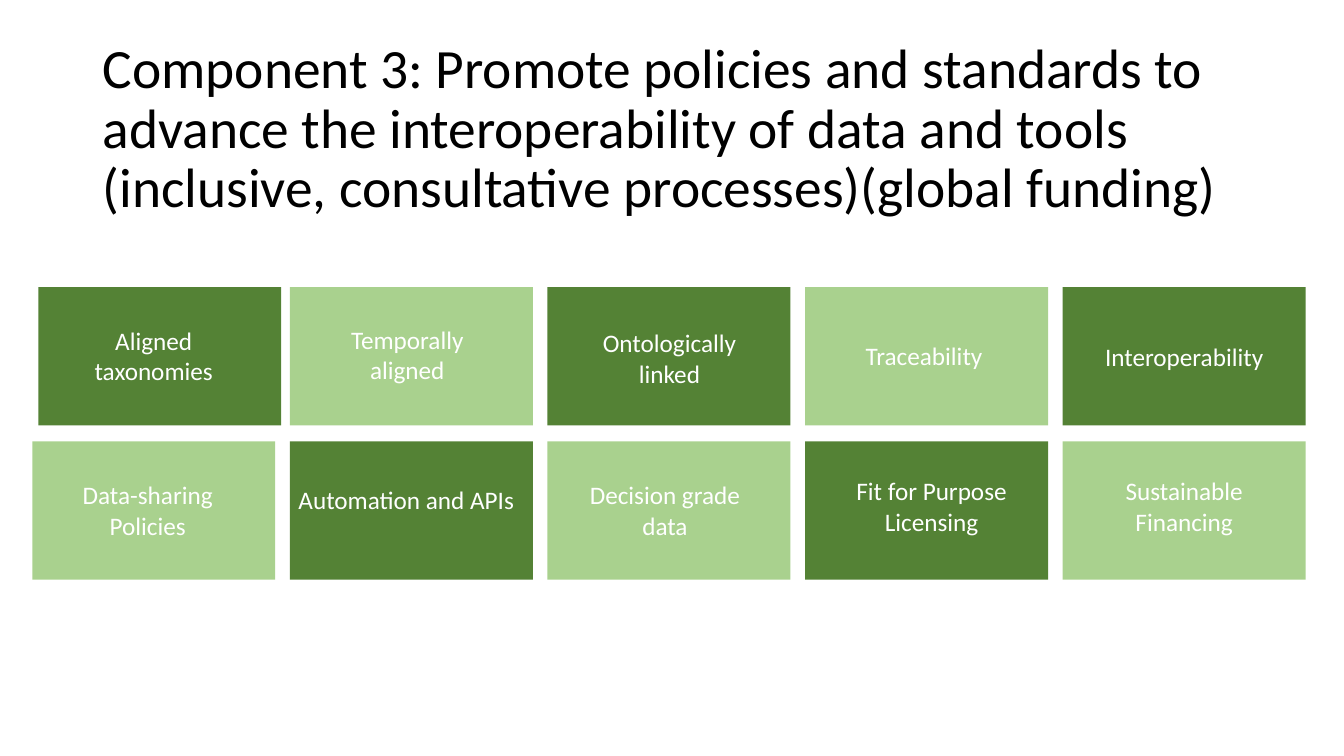
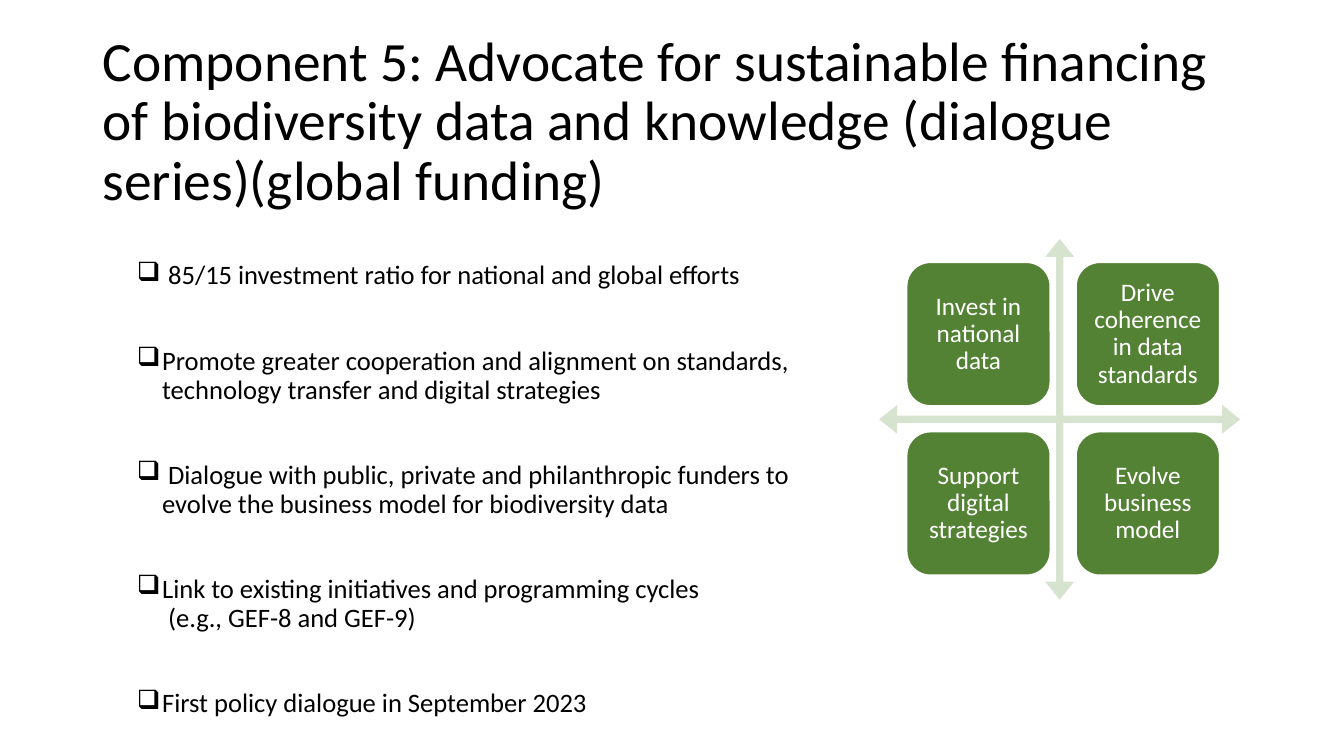
from lxml.etree import SubElement
from pptx import Presentation
from pptx.dml.color import RGBColor
from pptx.enum.shapes import MSO_SHAPE
from pptx.enum.text import MSO_ANCHOR, PP_ALIGN
from pptx.oxml.ns import qn
from pptx.util import Inches, Pt

COLORS = {
    "text": "000000",
    "white": "FFFFFF",
    "dark": "548235",
    "light": "A9D18E",
    "arrows": "D5E3CF",
}
FONT = "Calibri"


def apply(target, values):
    for name, value in values.items():
        setattr(target, name, value)


class Deck:
    def __init__(self):
        self.presentation = Presentation()
        apply(self.presentation, {"slide_width": Inches(13.33), "slide_height": Inches(7.5)})
        self.slide = None

    def start_slide(self, heading, heading_height):
        self.slide = self.presentation.slides.add_slide(self.presentation.slide_layouts[6])
        frame = self.text_box(0.92, 0.4, 11.5, heading_height)
        frame.vertical_anchor = MSO_ANCHOR.MIDDLE
        self.fill_paragraph(frame.paragraphs[0], heading, 39.6, "text", {"line_spacing": 0.9})

    def text_box(self, left, top, width, height):
        box = self.slide.shapes.add_textbox(
            Inches(left), Inches(top), Inches(width), Inches(height))
        box.text_frame.word_wrap = True
        return box.text_frame

    def fill_paragraph(self, paragraph, text, size, color, layout):
        paragraph.text = text
        apply(paragraph, layout)
        for run in paragraph.runs:
            apply(run.font, {"name": FONT, "size": Pt(size)})
            run.font.color.rgb = RGBColor.from_string(COLORS[color])

    def shape(self, preset, left, top, width, height, fill, outline=None):
        shape = self.slide.shapes.add_shape(
            preset, Inches(left), Inches(top), Inches(width), Inches(height))
        shape.shadow.inherit = False
        shape.fill.solid()
        shape.fill.fore_color.rgb = RGBColor.from_string(COLORS[fill])
        if outline:
            shape.line.color.rgb = RGBColor.from_string(COLORS[outline])
            shape.line.width = Pt(1.5)
        else:
            shape.line.fill.background()
        return shape

    def label(self, shape, text, margins, anchor, line_spacing):
        sides = ("margin_left", "margin_top", "margin_right", "margin_bottom")
        frame = shape.text_frame
        apply(frame, dict(zip(sides, map(Inches, margins))))
        apply(frame, {"word_wrap": True, "vertical_anchor": anchor})
        self.fill_paragraph(frame.paragraphs[0], text, 18, "white",
                            {"alignment": PP_ALIGN.CENTER, "line_spacing": line_spacing})

    def tile(self, left, top, fill, text, text_left, text_top, text_width):
        width = 2.41
        tile = self.shape(MSO_SHAPE.RECTANGLE, left, top, width, 1.37, fill)
        margins = (text_left, text_top, width - text_left - text_width, 0)
        self.label(tile, text, margins, MSO_ANCHOR.TOP, 1.0)

    def quadrant(self, left, top, text):
        card = self.shape(MSO_SHAPE.ROUNDED_RECTANGLE, left, top, 1.43, 1.43, "dark", "white")
        self.label(card, text, [0.07] * 4, MSO_ANCHOR.MIDDLE, 0.9)

    def cross_arrows(self, left, top, size):
        arrows = self.shape(MSO_SHAPE.QUAD_ARROW, left, top, size, size, "arrows")
        for index, ratio in enumerate((0.02, 0.04, 0.05)):
            arrows.adjustments[index] = ratio

    def checklist(self, left, top, width, height, items):
        frame = self.text_box(left, top, width, height)
        for index, item in enumerate(items):
            paragraph = frame.add_paragraph() if index else frame.paragraphs[0]
            gap = Pt(40.5 if index else 0)
            self.fill_paragraph(paragraph, item, 19, "text",
                                {"line_spacing": 0.9, "space_before": gap})
            properties = paragraph._p.get_or_add_pPr()
            properties.set("marL", str(Inches(0.25)))
            properties.set("indent", str(-Inches(0.25)))
            SubElement(properties, qn("a:buChar")).set("char", "❑")


POLICY_ROWS = [
    [
        ("Aligned taxonomies", 0.22, 0.38, 1.85),
        ("Temporally aligned", 0.34, 0.37, 1.65),
        ("Ontologically linked", 0.29, 0.4, 1.84),
        ("Traceability", 0.3, 0.53, 1.76),
        ("Interoperability", 0.28, 0.54, 1.85),
    ],
    [
        ("Data-sharing Policies", 0.28, 0.38, 1.73),
        ("Automation and APIs", 0.05, 0.43, 2.21),
        ("Decision grade data", 0.4, 0.38, 1.53),
        ("Fit for Purpose Licensing", 0.25, 0.34, 2.01),
        ("Sustainable Financing", 0.18, 0.34, 2.05),
    ],
]
FINANCING_ACTIONS = [
    " 85/15 investment ratio for national and global efforts",
    "Promote greater cooperation and alignment on standards, technology transfer "
    "and digital strategies",
    " Dialogue with public, private and philanthropic funders to evolve the business "
    "model for biodiversity data",
    "Link to existing initiatives and programming cycles \v (e.g., GEF-8 and GEF-9)",
    "First policy dialogue in September 2023",
]
FINANCING_GOALS = [
    "Invest in national data",
    "Drive coherence in data standards",
    "Support digital strategies",
    "Evolve business model",
]


def policies_slide(deck):
    deck.start_slide(
        "Component 3: Promote policies and standards to advance the interoperability of data "
        "and tools (inclusive, consultative processes)(global funding)", 1.78)
    first_left, last_left = 0.32, 10.54
    for row, policies in enumerate(POLICY_ROWS):
        step = (last_left - first_left) / (len(policies) - 1)
        for column, policy in enumerate(policies):
            nudge = 0.06 if row == column == 0 else 0
            fill = "light" if (row + column) % 2 else "dark"
            deck.tile(first_left + column * step + nudge, 2.85 + row * 1.53, fill, *policy)


def financing_slide(deck):
    deck.start_slide(
        "Component 5: Advocate for sustainable financing of biodiversity data and knowledge "
        "(dialogue series)(global funding)", 1.64)
    deck.checklist(1.26, 2.55, 6.94, 4.55, FINANCING_ACTIONS)
    deck.cross_arrows(8.72, 2.37, 3.58)
    for index, goal in enumerate(FINANCING_GOALS):
        row, column = divmod(index, 2)
        deck.quadrant(8.99 + column * 1.68, 2.6 + row * 1.68, goal)


def main():
    deck = Deck()
    policies_slide(deck)
    financing_slide(deck)
    deck.presentation.save("out.pptx")


if __name__ == "__main__":
    main()
